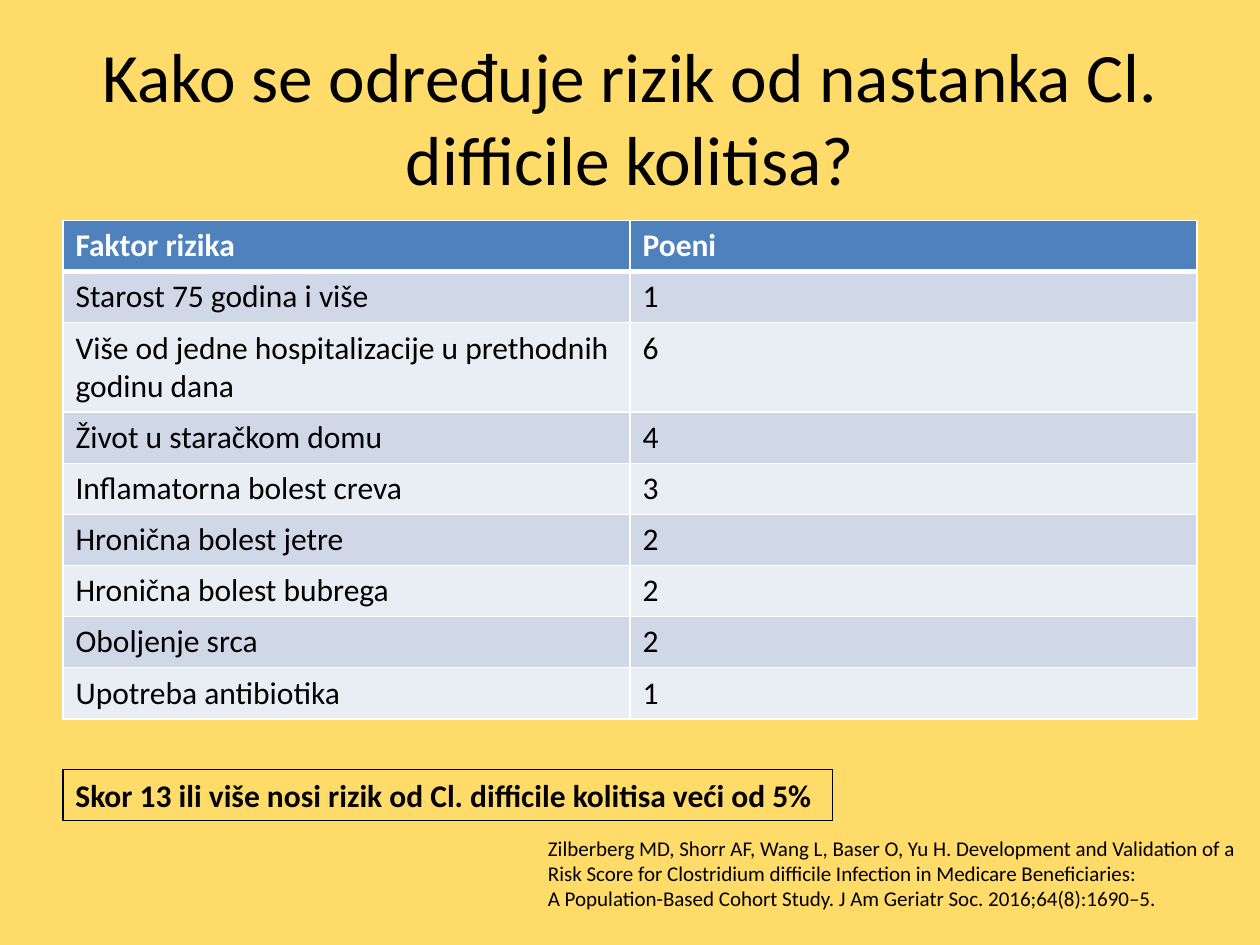
"""Build the slide on scoring the risk of Clostridium difficile colitis."""
from dataclasses import dataclass

from lxml import etree
from pptx import Presentation, util as u
from pptx.dml.color import RGBColor
from pptx.enum import shapes, text
from pptx.oxml import ns


@dataclass(frozen=True)
class Theme:
    """Colours, type sizes and font of the slide."""
    font: str = "Calibri"
    page: str = "FFDB69"
    ink: str = "000000"
    rule: str = "FFFFFF"
    header: str = "4F81BD"
    bands: tuple = ("D0D8E8", "E9EDF4")
    title: float = 39.6
    body: float = 18
    source: float = 12


class SlideBuilder:
    """Place styled elements on a grid of 40 columns by 30 rows."""

    def __init__(self, deck, theme):
        """Open a title-only page with the theme's background."""
        self.theme = theme
        self.column, self.row = deck.slide_width / 40, deck.slide_height / 30
        self.page = deck.slides.add_slide(deck.slide_layouts[5])
        self.paint(self.page.background.fill, theme.page)

    def area(self, left, top, width, height):
        """Turn grid units into lengths."""
        units = (self.column, self.row) * 2
        return [u.Emu(round(n * unit)) for n, unit in zip((left, top, width, height), units)]

    def paint(self, fill, color):
        """Apply one solid colour."""
        fill.solid()
        fill.fore_color.rgb = RGBColor.from_string(color)

    def add_lines(self, frame, lines, size, color=None, bold=False, align=text.PP_ALIGN.LEFT):
        """Fill a text frame with one paragraph for each line."""
        formats = {"name": self.theme.font, "size": u.Pt(size), "bold": bold}
        for index, line in enumerate(lines):
            para = frame.add_paragraph() if index else frame.paragraphs[0]
            para.alignment = align
            span = para.add_run()
            span.text = line
            for name, value in formats.items():
                setattr(span.font, name, value)
            span.font.color.rgb = RGBColor.from_string(color or self.theme.ink)

    def title(self, place, words):
        """Move and fill the title placeholder."""
        box = self.page.shapes.title
        for name, value in zip(("left", "top", "width", "height"), self.area(*place)):
            setattr(box, name, value)
        box.text_frame.word_wrap = True
        box.text_frame.vertical_anchor = text.MSO_ANCHOR.MIDDLE
        self.add_lines(box.text_frame, [words], self.theme.title, align=text.PP_ALIGN.CENTER)

    def border(self, cell, widths):
        """Draw the four cell borders, given in points."""
        properties = cell._tc.get_or_add_tcPr()
        for side, width in widths.items():
            line = etree.SubElement(properties, ns.qn(f"a:ln{side}"), w=str(u.Pt(width)))
            fill = etree.SubElement(line, ns.qn("a:solidFill"))
            etree.SubElement(fill, ns.qn("a:srgbClr"), val=self.theme.rule)

    def table(self, place, rows):
        """Add a banded table with a header row."""
        theme = self.theme
        table = self.page.shapes.add_table(len(rows), len(rows[0]), *self.area(*place)).table
        for r, values in enumerate(rows):
            header = r == 0
            widths = {"L": 1, "R": 1, "T": 3 if r == 1 else 1, "B": 3 if header else 1}
            for c, value in enumerate(values):
                cell = table.cell(r, c)
                self.border(cell, widths)
                self.paint(cell.fill, theme.header if header else theme.bands[(r - 1) % 2])
                self.add_lines(cell.text_frame, [value], theme.body,
                               theme.rule if header else theme.ink, header)

    def fit(self, frame):
        """Let the box follow its unwrapped text."""
        formats = {"word_wrap": False, "auto_size": text.MSO_AUTO_SIZE.SHAPE_TO_FIT_TEXT,
                   "vertical_anchor": text.MSO_ANCHOR.TOP}
        for name, value in formats.items():
            setattr(frame, name, value)

    def callout(self, place, words):
        """Add an outlined box with a bold statement."""
        box = self.page.shapes.add_shape(shapes.MSO_SHAPE.RECTANGLE, *self.area(*place))
        box.shadow.inherit = False
        box.fill.background()
        self.paint(box.line.fill, self.theme.ink)
        box.line.width = u.Pt(0.75)
        self.fit(box.text_frame)
        self.add_lines(box.text_frame, [words], self.theme.body, bold=True)

    def citation(self, place, lines):
        """Add the source reference."""
        box = self.page.shapes.add_textbox(*self.area(*place))
        self.fit(box.text_frame)
        self.add_lines(box.text_frame, lines, self.theme.source)


RISK_FACTORS = [
    ("Faktor rizika", "Poeni"),
    ("Starost 75 godina i više", "1"),
    ("Više od jedne hospitalizacije u prethodnih godinu dana", "6"),
    ("Život u staračkom domu", "4"),
    ("Inflamatorna bolest creva", "3"),
    ("Hronična bolest jetre", "2"),
    ("Hronična bolest bubrega", "2"),
    ("Oboljenje srca", "2"),
    ("Upotreba antibiotika", "1"),
]
SOURCE = [
    "Zilberberg MD, Shorr AF, Wang L, Baser O, Yu H. Development and Validation of a",
    "Risk Score for Clostridium difficile Infection in Medicare Beneficiaries:",
    "A Population-Based Cohort Study. J Am Geriatr Soc. 2016;64(8):1690–5.",
]


def main():
    """Compose and save the deck."""
    deck = Presentation()
    deck.slide_width, deck.slide_height = u.Inches(10), u.Inches(7.5)
    slide = SlideBuilder(deck, Theme())
    slide.title((2, 1.2, 36, 5), "Kako se određuje rizik od nastanka Cl. difficile kolitisa?")
    slide.table((2, 7, 36, 1.62 * len(RISK_FACTORS)), RISK_FACTORS)
    slide.callout((2, 24.44, 24.44, 1.62),
                  "Skor 13 ili više nosi rizik od Cl. difficile kolitisa veći od 5%")
    slide.citation((17, 26.32, 23, 2.84), SOURCE)
    deck.save("out.pptx")


if __name__ == "__main__":
    main()
